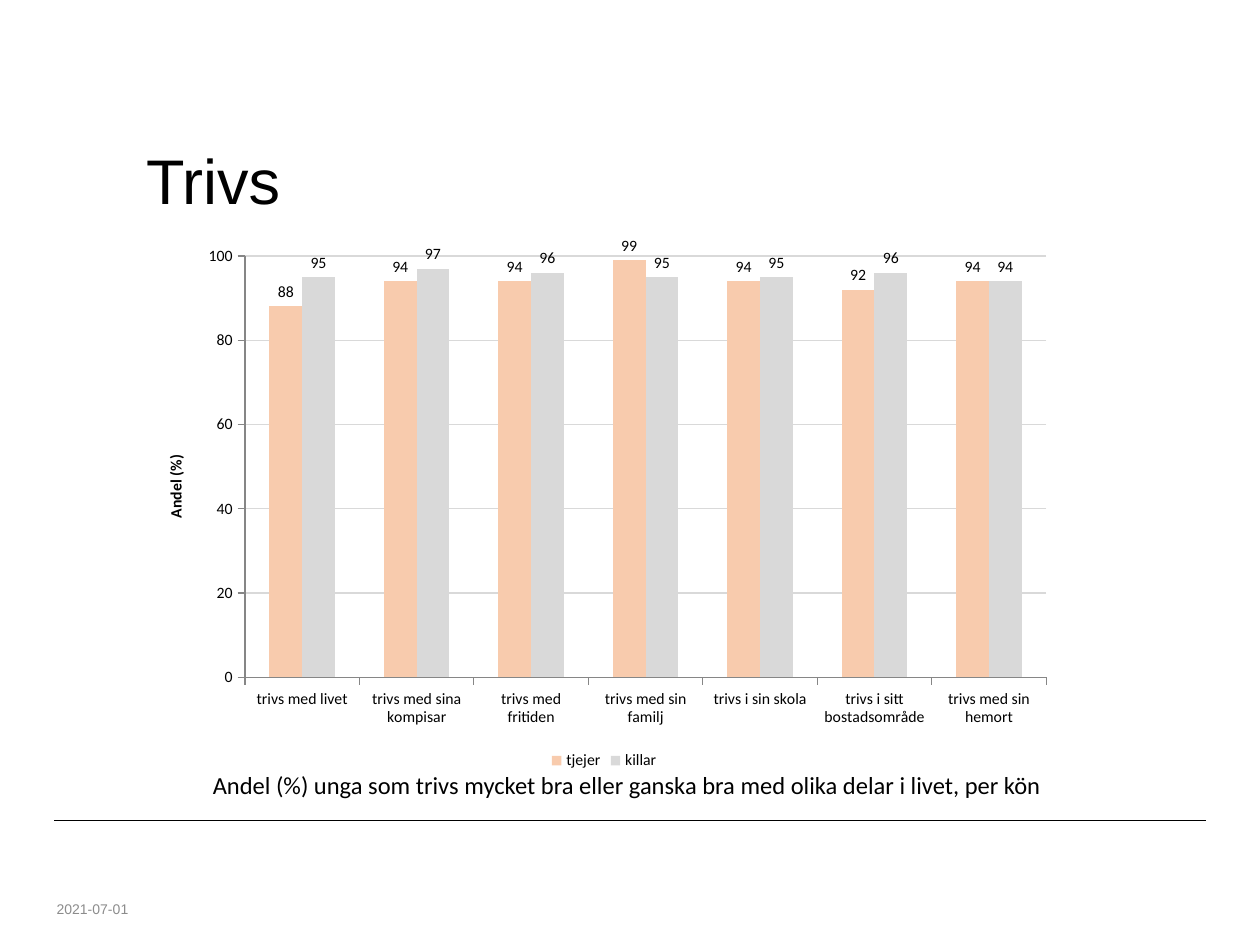
from dataclasses import dataclass
from lxml import etree
from pptx import Presentation
from pptx.chart.data import CategoryChartData as Data
from pptx.dml.color import RGBColor as Color
from pptx.enum.chart import XL_CHART_TYPE as Kind, XL_LABEL_POSITION as Spot
from pptx.enum.chart import XL_LEGEND_POSITION as Side, XL_TICK_MARK as Tick
from pptx.enum.shapes import MSO_CONNECTOR as Link
from pptx.enum.text import MSO_ANCHOR as Anchor, PP_ALIGN as Align
from pptx.oxml import parse_xml
from pptx.oxml.ns import nsdecls, qn
from pptx.util import Inches, Pt


@dataclass(frozen=True)
class Theme:
    ink: str = "000000"
    muted: str = "8C8C8C"
    axis: str = "868686"
    grid: str = "D9D9D9"
    girls: str = "F8CBAD"
    boys: str = "D9D9D9"
    head: str = "Arial"
    body: str = "Calibri"
    title: int = 36
    note: int = 14
    chart: int = 9
    date: int = 8


theme = Theme()


def style(font, name, size, tint):
    font.name = name
    font.size = Pt(size)
    font.color.rgb = Color.from_string(tint)


def write(shape, text, name, size, tint, anchor, wrap=True):
    frame = shape.text_frame
    frame.text = text
    frame.word_wrap = wrap
    frame.vertical_anchor = anchor
    line = frame.paragraphs[0]
    line.alignment = Align.LEFT
    style(line.runs[0].font, name, size, tint)


deck = Presentation()
deck.slide_width, deck.slide_height = Inches(10), Inches(7.5)
slide = deck.slides.add_slide(deck.slide_layouts[5])
shapes = slide.shapes

rule = shapes.add_connector(Link.STRAIGHT, Inches(0.43), Inches(6.51), Inches(9.57), Inches(6.51))
rule.line.color.rgb = Color.from_string(theme.ink)
rule.line.width = Pt(0.5)
etree.SubElement(rule.element.spPr, qn("a:effectLst"))

title = shapes.title
title.left, title.top = Inches(1.06), Inches(1.07)
title.width, title.height = Inches(7.95), Inches(0.71)
write(title, "Trivs", theme.head, theme.title, theme.ink, Anchor.MIDDLE)

date = shapes.add_textbox(Inches(0.35), Inches(7.09), Inches(0.79), Inches(0.24))
write(date, "2021-07-01", theme.head, theme.date, theme.muted, Anchor.MIDDLE, False)

data = Data()
data.categories = [
    "trivs med livet", "trivs med sina kompisar", "trivs med fritiden",
    "trivs med sin familj", "trivs i sin skola",
    "trivs i sitt bostadsområde", "trivs med sin hemort",
]
data.add_series("tjejer", [88, 94, 94, 99, 94, 92, 94])
data.add_series("killar", [95, 97, 96, 95, 95, 96, 94])
chart = shapes.add_chart(
    Kind.COLUMN_CLUSTERED, Inches(1.14), Inches(1.86), Inches(7.31), Inches(4.29), data
).chart
chart.has_title = False
style(chart.font, theme.body, theme.chart, theme.ink)
chart.has_legend = True
chart.legend.position = Side.BOTTOM
chart.legend.include_in_layout = False

plot = chart.plots[0]
plot.gap_width = 150
plot.overlap = 0
plot.vary_by_categories = False
for row, tint in zip(plot.series, (theme.girls, theme.boys)):
    row.format.fill.solid()
    row.format.fill.fore_color.rgb = Color.from_string(tint)
    row.invert_if_negative = False
    row.data_labels.show_value = True
    row.data_labels.position = Spot.OUTSIDE_END

scale = chart.value_axis
scale.minimum_scale, scale.maximum_scale, scale.major_unit = 0, 100, 20
scale.has_major_gridlines = True
grid = scale.major_gridlines.format.line
grid.color.rgb = Color.from_string(theme.grid)
grid.width = Pt(0.75)
scale.axis_title.text_frame.text = "Andel (%)"
label = scale.axis_title.text_frame.paragraphs[0].runs[0].font
style(label, theme.body, theme.chart, theme.ink)
label.bold = True
for axis in (scale, chart.category_axis):
    axis.major_tick_mark = Tick.OUTSIDE
    axis.minor_tick_mark = Tick.NONE
    axis.format.line.color.rgb = Color.from_string(theme.axis)
    axis.format.line.width = Pt(0.75)

area = chart.element.chart.plotArea
for old in area.findall(qn("c:layout")):
    area.remove(old)
area.insert(0, parse_xml(
    f'<c:layout {nsdecls("c")}><c:manualLayout><c:layoutTarget val="inner"/>'
    '<c:xMode val="edge"/><c:yMode val="edge"/><c:x val="0.11"/><c:y val="0.04"/>'
    '<c:w val="0.87"/><c:h val="0.78"/></c:manualLayout></c:layout>'
))

note = shapes.add_textbox(Inches(1.59), Inches(6.06), Inches(6.88), Inches(0.34))
write(
    note,
    "Andel (%) unga som trivs mycket bra eller ganska bra med olika delar i livet, per kön",
    theme.body, theme.note, theme.ink, Anchor.TOP, False,
)

deck.save("out.pptx")
